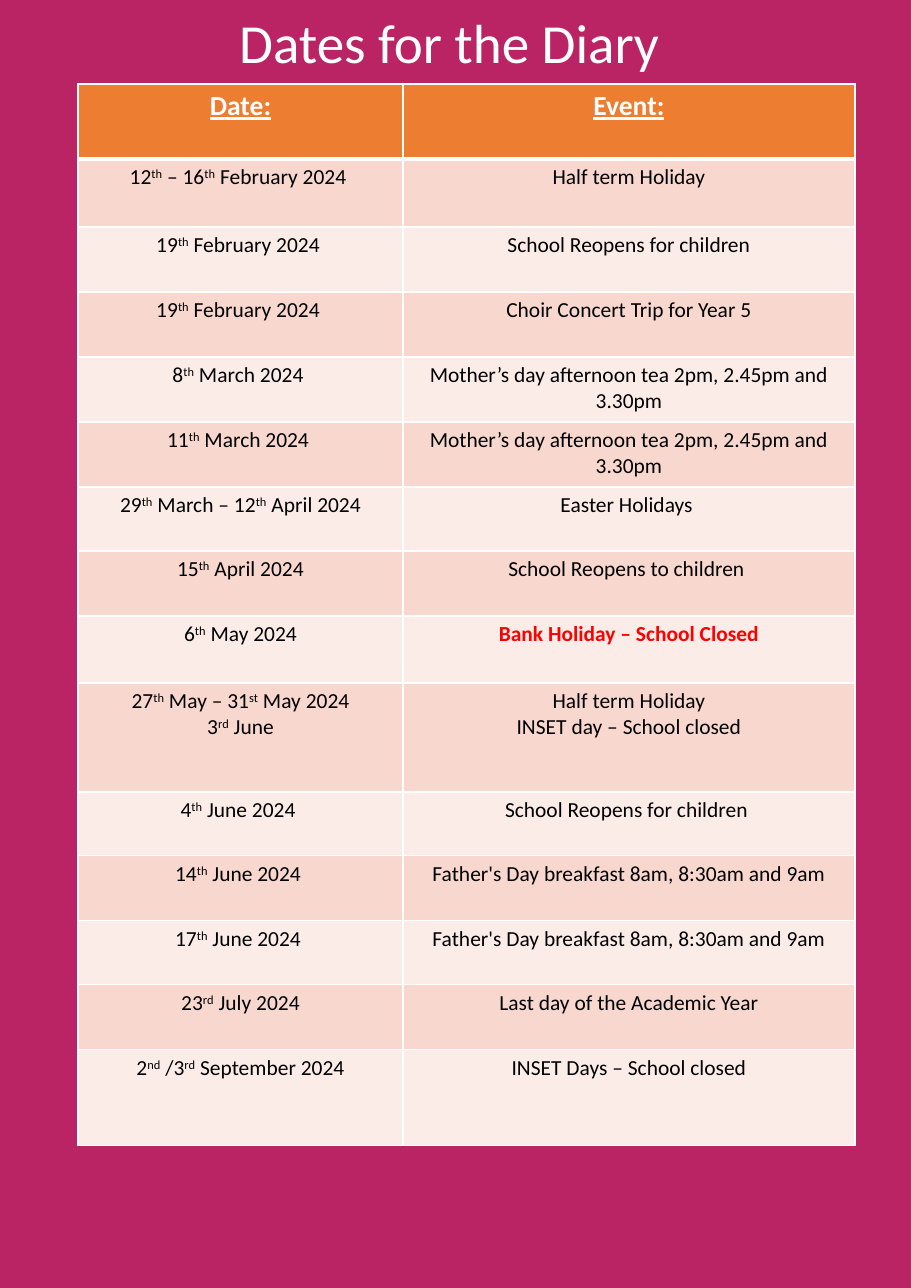
from dataclasses import dataclass

from lxml.etree import SubElement
from pptx import Presentation
from pptx.dml.color import RGBColor
from pptx.enum.text import MSO_ANCHOR as Anchor, MSO_AUTO_SIZE as AutoSize, PP_ALIGN as Align
from pptx.oxml.ns import qn
from pptx.slide import Slide
from pptx.table import _Cell as Cell
from pptx.text.text import TextFrame
from pptx.util import Emu, Pt

EMU_PER_PX = 8298
FONT = "Calibri"
MAGENTA = RGBColor(0xBA, 0x24, 0x64)
ORANGE = RGBColor(0xED, 0x7D, 0x31)
PEACH = RGBColor(0xF8, 0xD7, 0xCE)
PALE_PEACH = RGBColor(0xFC, 0xEC, 0xE8)
WHITE = RGBColor(0xFF, 0xFF, 0xFF)
BLACK = RGBColor(0x00, 0x00, 0x00)
RED = RGBColor(0xFF, 0x00, 0x00)

SLIDE_WIDTH, SLIDE_HEIGHT = 911, 1288
TITLE_HEIGHT = 82
TABLE_LEFT, TABLE_TOP = 78, 84
COLUMN_WIDTHS = (325, 452)
HEADER_HEIGHT = 75
SUPERSCRIPT_MARK = "^"


@dataclass(frozen=True)
class DiaryEntry:
    date: str
    event: str
    height: int
    closed: bool = False


ENTRIES = (
    DiaryEntry("12^th^ – 16^th^ February 2024 ", "Half term Holiday", 68),
    DiaryEntry("19^th^ February 2024 ", "School Reopens for children", 65),
    DiaryEntry("19^th^ February 2024 ", "Choir Concert Trip for Year 5", 65),
    DiaryEntry("8^th^ March 2024 ", "Mother’s day afternoon tea 2pm, 2.45pm and 3.30pm", 65),
    DiaryEntry("11^th^ March 2024 ", "Mother’s day afternoon tea 2pm, 2.45pm and 3.30pm", 65),
    DiaryEntry("29^th^ March – 12^th^ April 2024", "Easter Holidays ", 64),
    DiaryEntry("15^th^ April 2024", "School Reopens to children ", 65),
    DiaryEntry("6^th^ May 2024", "Bank Holiday – School Closed", 67, closed=True),
    DiaryEntry("27^th^ May – 31^st^ May 2024\n3^rd^ June",
               "Half term Holiday\nINSET day – School closed", 109),
    DiaryEntry("4^th^ June 2024 ", "School Reopens for children ", 64),
    DiaryEntry("14^th^ June 2024 ", "Father's Day breakfast 8am, 8:30am and 9am", 65),
    DiaryEntry("17^th^ June 2024 ", "Father's Day breakfast 8am, 8:30am and 9am", 64),
    DiaryEntry("23^rd^ July 2024", "Last day of the Academic Year", 65),
    DiaryEntry("2^nd^ /3^rd^ September 2024", "INSET Days – School closed", 96),
)


def px(length: int) -> Emu:
    return Emu(length * EMU_PER_PX)


def write_text(frame: TextFrame, text: str, *, size: int = 14, color: RGBColor = BLACK,
               bold: bool = False, underline: bool = False) -> None:
    for line_index, line in enumerate(text.split("\n")):
        paragraph = frame.add_paragraph() if line_index else frame.paragraphs[0]
        paragraph.alignment = Align.CENTER
        for part_index, part in enumerate(line.split(SUPERSCRIPT_MARK)):
            run = paragraph.add_run()
            run.text = part
            run.font.name = FONT
            run.font.size = Pt(size)
            run.font.bold = bold
            run.font.underline = underline
            run.font.color.rgb = color
            if part_index % 2:
                run.font._element.set("baseline", "30000")


def format_cell(cell: Cell, fill: RGBColor, *, top: int = 1, bottom: int = 1) -> None:
    properties = cell._tc.get_or_add_tcPr()
    for side, width in (("L", 1), ("R", 1), ("T", top), ("B", bottom)):
        border = SubElement(properties, qn(f"a:ln{side}"), w=str(Pt(width)))
        border_fill = SubElement(border, qn("a:solidFill"))
        SubElement(border_fill, qn("a:srgbClr"), val=str(WHITE))
    cell.fill.solid()
    cell.fill.fore_color.rgb = fill


def add_title(slide: Slide) -> None:
    title = slide.shapes.title
    title.left, title.top = px(0), px(0)
    title.width, title.height = px(SLIDE_WIDTH), px(TITLE_HEIGHT)
    title.fill.solid()
    title.fill.fore_color.rgb = MAGENTA
    title.text_frame.auto_size = AutoSize.NONE
    title.text_frame.word_wrap = True
    title.text_frame.vertical_anchor = Anchor.MIDDLE
    write_text(title.text_frame, "Dates for the Diary ", size=36, color=WHITE)


def add_diary(slide: Slide) -> None:
    heights = (HEADER_HEIGHT, *(entry.height for entry in ENTRIES))
    frame = slide.shapes.add_table(len(heights), len(COLUMN_WIDTHS), px(TABLE_LEFT),
                                   px(TABLE_TOP), px(sum(COLUMN_WIDTHS)), px(sum(heights)))
    table = frame.table
    for column, width in zip(table.columns, COLUMN_WIDTHS):
        column.width = px(width)
    for row, height in zip(table.rows, heights):
        row.height = px(height)

    for cell, heading in zip(table.rows[0].cells, ("Date:", "Event:")):
        format_cell(cell, ORANGE, bottom=3)
        write_text(cell.text_frame, heading, size=18, color=WHITE, bold=True, underline=True)

    for index, entry in enumerate(ENTRIES):
        date_cell, event_cell = table.rows[index + 1].cells
        for cell in (date_cell, event_cell):
            format_cell(cell, PALE_PEACH if index % 2 else PEACH, top=1 if index else 3)
        write_text(date_cell.text_frame, entry.date)
        write_text(event_cell.text_frame, entry.event, bold=entry.closed,
                   color=RED if entry.closed else BLACK)


def main() -> None:
    presentation = Presentation()
    presentation.slide_width, presentation.slide_height = px(SLIDE_WIDTH), px(SLIDE_HEIGHT)
    title_only = presentation.slide_layouts.get_by_name("Title Only")
    slide = presentation.slides.add_slide(title_only)
    slide.background.fill.solid()
    slide.background.fill.fore_color.rgb = MAGENTA
    add_title(slide)
    add_diary(slide)
    presentation.save("out.pptx")


if __name__ == "__main__":
    main()
